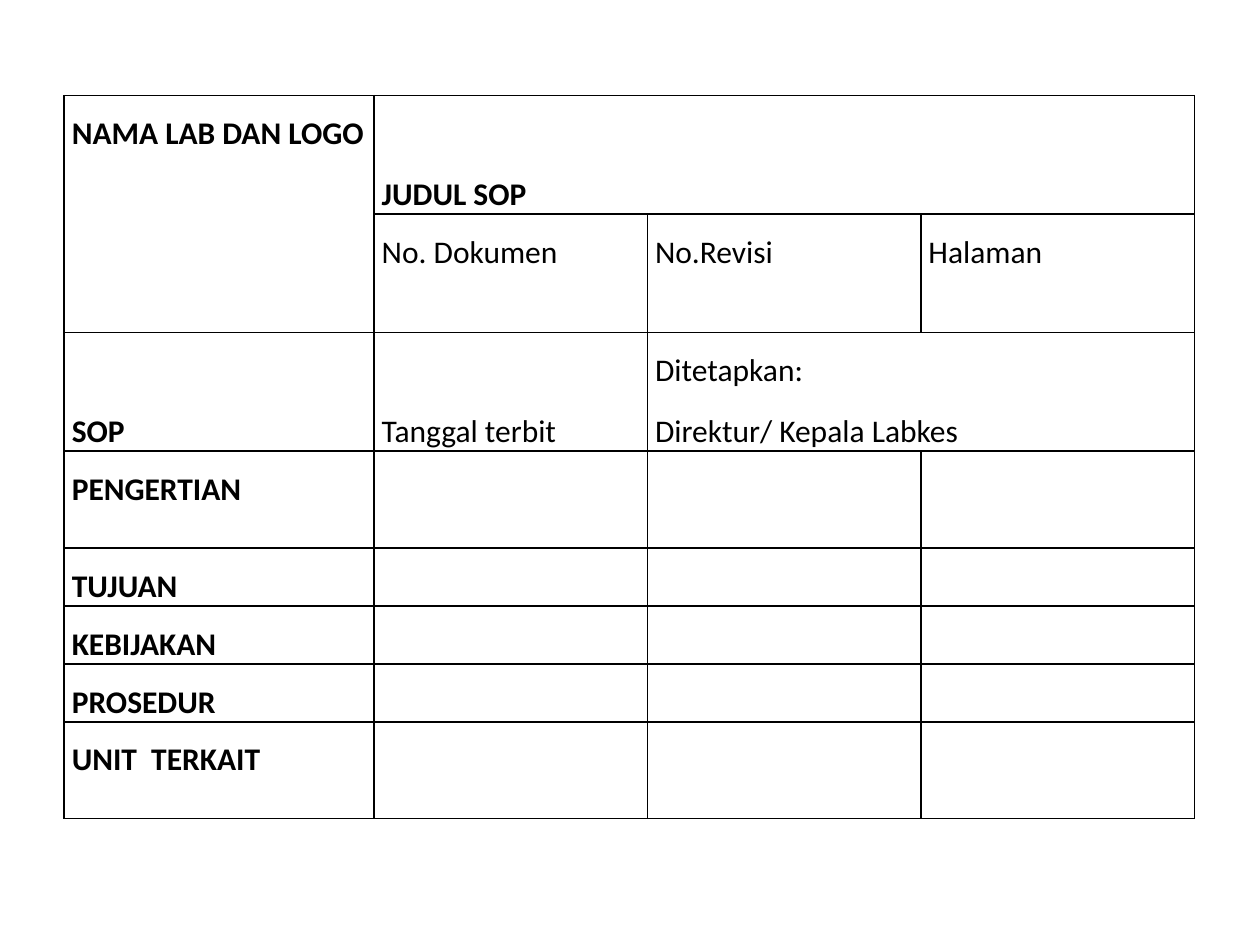
from dataclasses import dataclass

from lxml import etree
from pptx import Presentation
from pptx import util as u
from pptx.dml.color import RGBColor
from pptx.enum import text
from pptx.oxml.ns import qn


@dataclass(frozen=True)
class Theme:
    font: str = "Calibri"
    size: float = 18
    ink: str = "000000"
    border: float = 1
    inset: float = 0.06


THEME = Theme()
TOP, BOTTOM = text.MSO_ANCHOR.TOP, text.MSO_ANCHOR.BOTTOM
LEFT_TOP = (0.51, 0.76)
COLS = [2.46] + [2.17] * 3
ROWS = [0.94] * 3 + [0.77] + [0.46] * 3 + [0.77]
SECTIONS = ["PENGERTIAN", "TUJUAN", "KEBIJAKAN", "PROSEDUR", "UNIT  TERKAIT"]
MERGES = [((0, 0), (1, 0)), ((0, 1), (0, 3)), ((2, 2), (2, 3))]


def set_borders(cell):
    tc_pr = cell._tc.get_or_add_tcPr()
    for i, side in enumerate(("lnL", "lnR", "lnT", "lnB")):
        ln = etree.Element(qn(f"a:{side}"), w=str(u.Pt(THEME.border)))
        fill = etree.SubElement(ln, qn("a:solidFill"))
        etree.SubElement(fill, qn("a:srgbClr"), val=THEME.ink)
        tc_pr.insert(i, ln)


def style_cell(cell):
    cell.fill.background()
    cell.margin_left = cell.margin_right = u.Inches(THEME.inset)
    cell.margin_top = cell.margin_bottom = 0
    set_borders(cell)


def write(cell, *lines, bold=False, anchor=TOP):
    """Fill a cell with one justified paragraph per line."""
    cell.vertical_anchor = anchor
    tf = cell.text_frame
    for i, line in enumerate(lines):
        p = tf.add_paragraph() if i else tf.paragraphs[0]
        p.alignment = text.PP_ALIGN.JUSTIFY
        p.line_spacing = 1.5
        p.space_after = u.Pt(1.7)
        r = p.add_run()
        r.text = line
        r.font.name = THEME.font
        r.font.size = u.Pt(THEME.size)
        r.font.bold = bold
        r.font.color.rgb = RGBColor.from_string(THEME.ink)


def add_grid(s):
    size = (sum(COLS), sum(ROWS))
    box = [u.Inches(v) for v in (*LEFT_TOP, *size)]
    table = s.shapes.add_table(len(ROWS), len(COLS), *box).table
    table.first_row = table.horz_banding = False
    for col, width in zip(table.columns, COLS):
        col.width = u.Inches(width)
    for row, height in zip(table.rows, ROWS):
        row.height = u.Inches(height)
    for cell in table.iter_cells():
        style_cell(cell)
    for first, last in MERGES:
        table.cell(*first).merge(table.cell(*last))
    return table


def main():
    prs = Presentation()
    prs.slide_width, prs.slide_height = u.Inches(10), u.Inches(7.5)
    s = prs.slides.add_slide(prs.slide_layouts[6])
    table = add_grid(s)

    write(table.cell(0, 0), "NAMA LAB DAN LOGO", bold=True)
    write(table.cell(0, 1), "JUDUL SOP", bold=True, anchor=BOTTOM)
    for col, label in enumerate(("No. Dokumen", "No.Revisi", "Halaman"), 1):
        write(table.cell(1, col), label)
    write(table.cell(2, 0), "SOP", bold=True, anchor=BOTTOM)
    write(table.cell(2, 1), "Tanggal terbit", anchor=BOTTOM)
    write(table.cell(2, 2), "Ditetapkan:", "Direktur/ Kepala Labkes")
    for row, section in enumerate(SECTIONS, 3):
        write(table.cell(row, 0), section, bold=True)

    prs.save("out.pptx")


if __name__ == "__main__":
    main()
